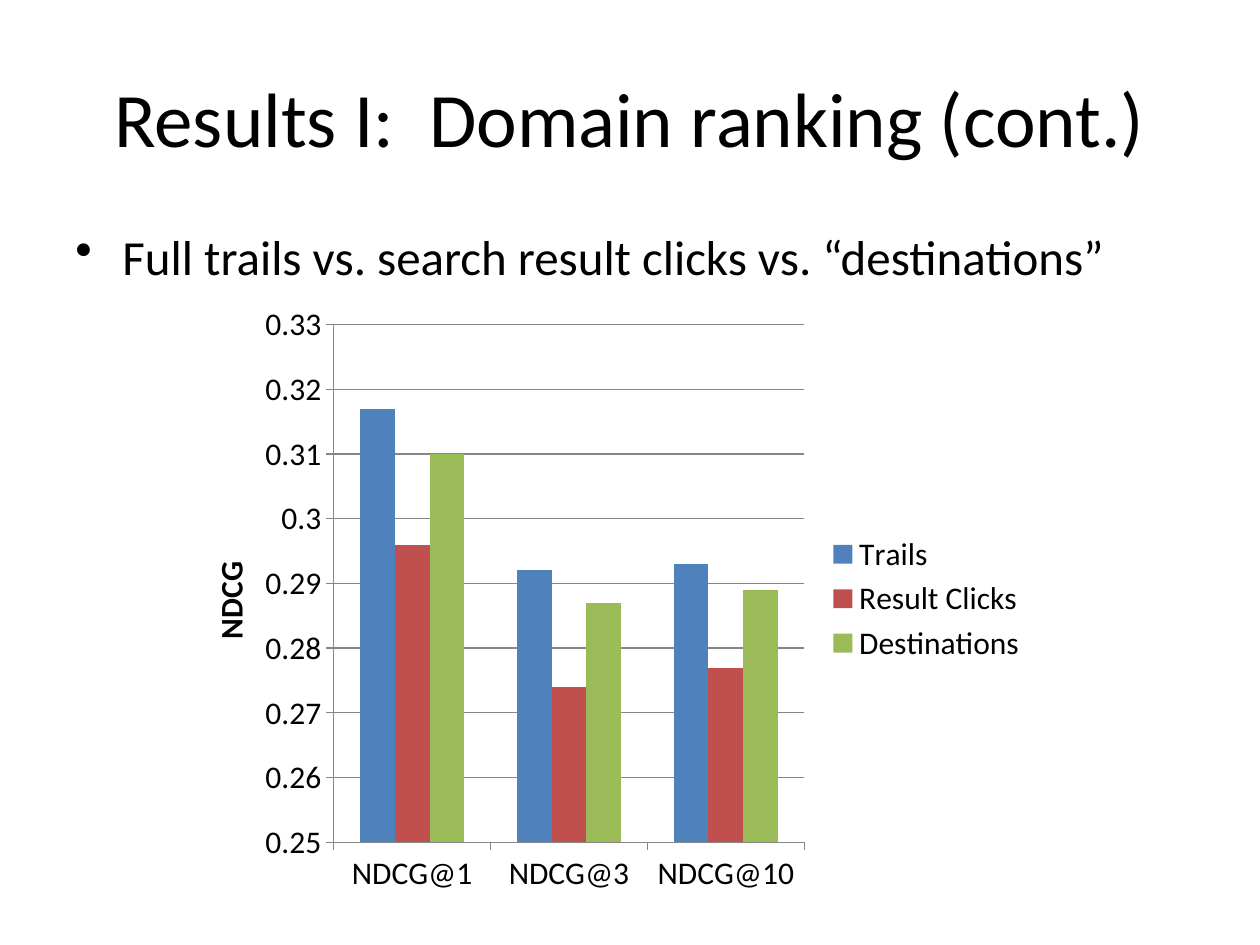
import pptx
import pptx.util
import pptx.chart.data
import pptx.dml.color
import pptx.enum.chart
import pptx.enum.text
import pptx.oxml
import pptx.oxml.ns
from pptx.util import Cm

FONT = "Calibri"
HUES = {
    "ink": "000000",
    "axis": "868686",
    "Trails": "4F81BD",
    "Result Clicks": "C0504D",
    "Destinations": "9BBB59",
}
CATS = ["NDCG@1", "NDCG@3", "NDCG@10"]
DATA = {
    "Trails": [0.317, 0.292, 0.293],
    "Result Clicks": [0.296, 0.274, 0.277],
    "Destinations": [0.310, 0.287, 0.289],
}


def hue(name):
    return pptx.dml.color.RGBColor.from_string(HUES[name])


def style(font, size, bold=False):
    font.name = FONT
    font.size = pptx.util.Pt(size)
    font.bold = bold
    font.color.rgb = hue("ink")


def write(slide, box, text, size=28, align="LEFT", anchor="TOP", bullet=None):
    frame = slide.shapes.add_textbox(*map(Cm, box)).text_frame
    frame.word_wrap = True
    frame.vertical_anchor = pptx.enum.text.MSO_ANCHOR[anchor]
    para = frame.paragraphs[0]
    para.alignment = pptx.enum.text.PP_ALIGN[align]
    run = para.add_run()
    run.text = text
    style(run.font, size)
    if bullet:
        para.space_before = pptx.util.Pt(size * 0.2)
        props = para._p.get_or_add_pPr()
        props.set("marL", str(Cm(0.95)))
        props.set("indent", str(-Cm(0.95)))
        mark = pptx.oxml.parse_xml(
            f'<a:buChar {pptx.oxml.ns.nsdecls("a")} char="{bullet}"/>')
        props.append(mark)


def place(node, spot, inner=False):
    tag = pptx.oxml.ns.qn("c:layout")
    old = node.find(tag)
    if old is None:
        old = pptx.oxml.parse_xml(f'<c:layout {pptx.oxml.ns.nsdecls("c")}/>')
        node.insert(0, old)
    target = '<c:layoutTarget val="inner"/>' if inner else ""
    modes = '<c:xMode val="edge"/><c:yMode val="edge"/>'
    sizes = "".join(f'<c:{key} val="{val}"/>' for key, val in zip("xywh", spot))
    old.append(pptx.oxml.parse_xml(
        f'<c:manualLayout {pptx.oxml.ns.nsdecls("c")}>'
        f'{target}{modes}{sizes}</c:manualLayout>'))


def trim(axis):
    axis.major_tick_mark = pptx.enum.chart.XL_TICK_MARK.OUTSIDE
    axis.minor_tick_mark = pptx.enum.chart.XL_TICK_MARK.NONE
    axis.format.line.color.rgb = hue("axis")
    axis.format.line.width = pptx.util.Pt(0.75)
    style(axis.tick_labels.font, 18)


def graph(slide, box):
    data = pptx.chart.data.CategoryChartData(number_format="General")
    data.categories = CATS
    for name, vals in DATA.items():
        data.add_series(name, vals)
    kind = pptx.enum.chart.XL_CHART_TYPE.COLUMN_CLUSTERED
    chart = slide.shapes.add_chart(kind, *map(Cm, box), data).chart
    style(chart.font, 18)
    chart.has_title = False

    plot = chart.plots[0]
    plot.vary_by_categories = False
    plot.gap_width = 150
    plot.overlap = 0
    for row in plot.series:
        row.format.fill.solid()
        row.format.fill.fore_color.rgb = hue(row.name)

    trim(chart.category_axis)
    axis = chart.value_axis
    trim(axis)
    axis.minimum_scale = 0.25
    axis.maximum_scale = 0.33
    axis.major_unit = 0.01
    axis.has_major_gridlines = True
    lines = axis.major_gridlines.format.line
    lines.color.rgb = hue("axis")
    lines.width = pptx.util.Pt(0.75)
    run = axis.axis_title.text_frame.paragraphs[0].add_run()
    run.text = "NDCG"
    style(run.font, 18, bold=True)
    axis.axis_title.text_frame._txBody.bodyPr.set("rot", "-5400000")
    place(axis.axis_title._element, (0.04, 0.43))

    chart.has_legend = True
    chart.legend.position = pptx.enum.chart.XL_LEGEND_POSITION.RIGHT
    chart.legend.include_in_layout = False
    style(chart.legend.font, 18)
    place(chart._chartSpace.chart.plotArea, (0.19, 0.05, 0.54, 0.85), inner=True)


def main():
    deck = pptx.Presentation()
    deck.slide_width = Cm(25.4)
    deck.slide_height = Cm(19.05)
    slide = deck.slides.add_slide(deck.slide_layouts[6])
    write(slide, (1.27, 0.76, 22.86, 3.18), "Results I:  Domain ranking (cont.)",
          size=44, align="CENTER", anchor="MIDDLE")
    write(slide, (1.27, 4.45, 22.86, 12.57),
          "Full trails vs. search result clicks vs. “destinations”", bullet="•")
    graph(slide, (3.39, 5.93, 17.57, 12.28))
    deck.save("out.pptx")


if __name__ == "__main__":
    main()
